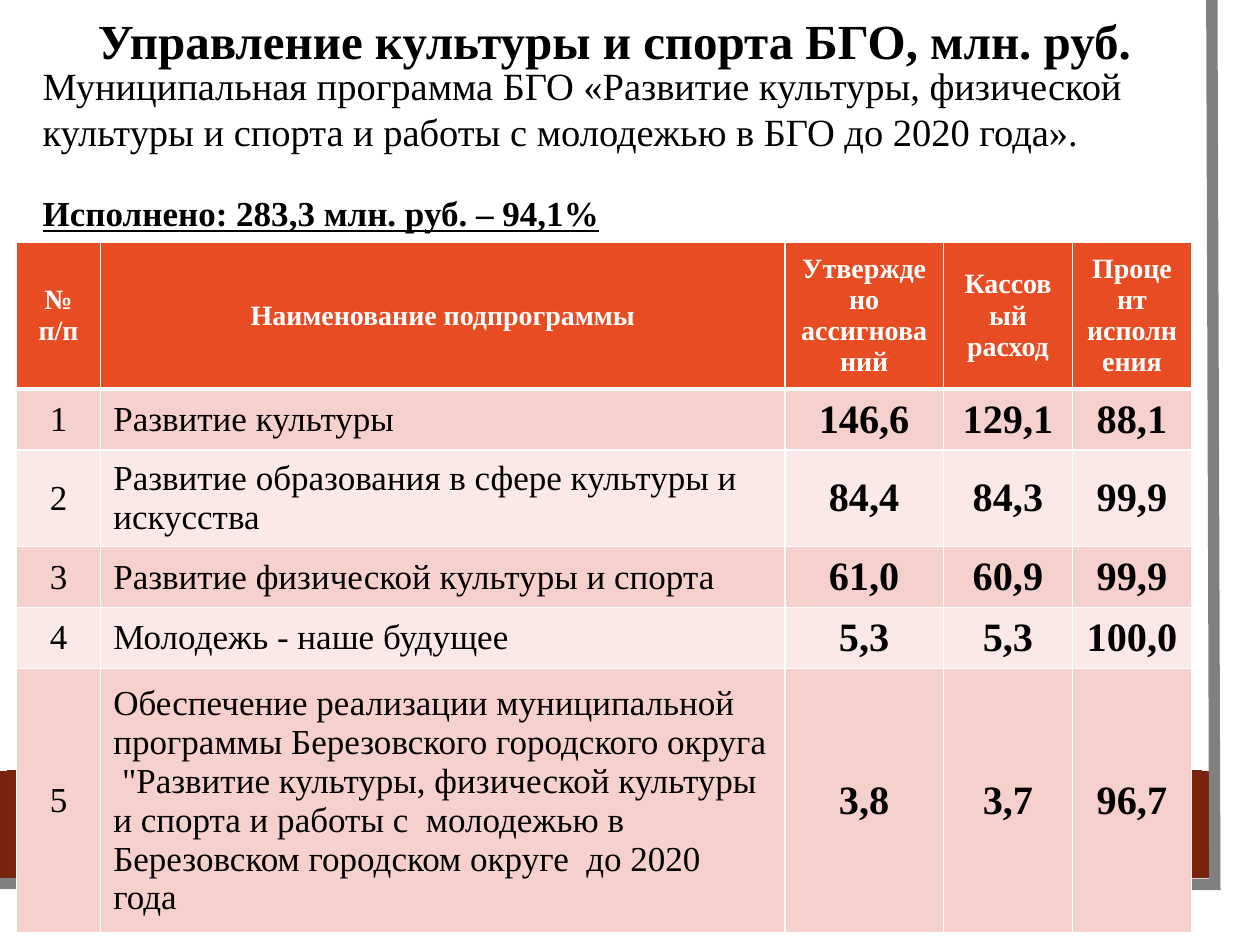
import lxml.etree
import pptx
import pptx.dml.color
import pptx.enum.dml
import pptx.enum.shapes
import pptx.enum.text
import pptx.oxml
import pptx.oxml.ns
import pptx.util

Cm = pptx.util.Cm
Pt = pptx.util.Pt
ALIGN = pptx.enum.text.PP_ALIGN
FONT = "Times New Roman"
NS = pptx.oxml.ns.nsdecls("a")
HUES = {
    "white": "FFFFFF",
    "black": "000000",
    "gray": "808080",
    "head": "E84C22",
    "dark": "78230D",
    "odd": "F6D0CD",
    "even": "FBE9E8",
}
COLS = [1.7, 13.79, 3.2, 2.6, 2.4]
ROWS = [2.06, 1.07, 1.24, 1.09, 0.84, 4.42]
DATA = [
    ["№\nп/п", "Наименование подпрограммы", "Утверждено ассигнований",
     "Кассовый расход", "Процент исполнения"],
    ["1", "Развитие культуры", "146,6", "129,1", "88,1"],
    ["2", "Развитие образования в сфере культуры и искусства",
     "84,4", "84,3", "99,9"],
    ["3", "Развитие физической культуры и спорта", "61,0", "60,9", "99,9"],
    ["4", "Молодежь - наше будущее", "5,3", "5,3", "100,0"],
    ["5", "Обеспечение реализации муниципальной программы Березовского "
     "городского округа  \"Развитие культуры, физической культуры и спорта "
     "и работы с  молодежью в Березовском городском округе  до 2020 года",
     "3,8", "3,7", "96,7"],
]


def tint(name):
    """Return the colour of that name."""
    return pptx.dml.color.RGBColor.from_string(HUES[name])


def write(para, text, size=20, hue="black", bold=False, line=False,
          align=ALIGN.LEFT, gap=None):
    """Put formatted text into a paragraph."""
    para.alignment = align
    if gap:
        para.space_before = Pt(gap)
    run = para.add_run()
    run.text = text
    font = run.font
    font.name, font.size, font.bold = FONT, Pt(size), bold
    font.underline = line
    font.color.rgb = tint(hue)


def add_box(slide, left, top, width, height):
    """Add a wrapping text box and return its frame."""
    box = slide.shapes.add_textbox(Cm(left), Cm(top), Cm(width), Cm(height))
    frame = box.text_frame
    frame.word_wrap = True
    frame.auto_size = pptx.enum.text.MSO_AUTO_SIZE.SHAPE_TO_FIT_TEXT
    return frame


def add_rect(slide, left, top, width, height):
    """Add a rectangle without outline or shadow."""
    rect = slide.shapes.add_shape(
        pptx.enum.shapes.MSO_SHAPE.RECTANGLE,
        Cm(left), Cm(top), Cm(width), Cm(height))
    rect.shadow.inherit = False
    rect.line.fill.background()
    return rect


def add_back(slide):
    """Draw the sheet, the ribbon and the gray edge."""
    sheet = add_rect(slide, 0, 0, 24.97, 18.47)
    sheet.fill.solid()
    sheet.fill.fore_color.rgb = tint("white")

    band = add_rect(slide, 0, 15.54, 24.38, 2.16)
    band.fill.gradient()
    for stop, hue, pos in zip(band.fill.gradient_stops,
                              ("head", "dark"), (0.34, 1)):
        stop.color.rgb, stop.position = tint(hue), pos
    lin = band.element.find(".//" + pptx.oxml.ns.qn("a:lin"))
    lin.getparent().replace(lin, pptx.oxml.parse_xml(
        f'<a:path {NS} path="circle"><a:fillToRect l="50000" t="50000" '
        'r="50000" b="50000"/></a:path>'))

    pen = slide.shapes.build_freeform(Cm(24.43), Cm(0))
    pen.add_line_segments([(Cm(24.49), Cm(17.83)), (Cm(-0.05), Cm(17.81))],
                          close=False)
    edge = pen.convert_to_shape()
    edge.shadow.inherit = False
    edge.fill.background()
    edge.line.color.rgb = tint("gray")
    edge.line.width = Pt(6.5)
    edge.line._get_or_add_ln().append(
        pptx.oxml.parse_xml(f'<a:miter {NS} lim="800000"/>'))


def rule(cell, row):
    """Set white borders, thick below the header row."""
    thick = {"T": 3 if row == 1 else 1, "B": 3 if row == 0 else 1}
    props = cell._tc.get_or_add_tcPr()
    for side in "LRTB":
        width = Pt(thick.get(side, 1))
        props.append(pptx.oxml.parse_xml(
            f'<a:ln{side} {NS} w="{width}"><a:solidFill><a:srgbClr '
            f'val="{HUES["white"]}"/></a:solidFill></a:ln{side}>'))


def fill_cell(cell, text, row, col):
    """Format one cell by its place in the table."""
    rule(cell, row)
    cell.fill.solid()
    cell.fill.fore_color.rgb = tint(
        "head" if row == 0 else "odd" if row % 2 else "even")
    cell.vertical_anchor = pptx.enum.text.MSO_ANCHOR.MIDDLE
    if row == 0:
        style = dict(size=16, hue="white", bold=True)
    elif col > 1:
        style = dict(size=23, bold=True)
    else:
        style = dict(size=20)
    align = ALIGN.LEFT if row and col == 1 else ALIGN.CENTER
    frame = cell.text_frame
    for idx, part in enumerate(text.split("\n")):
        para = frame.add_paragraph() if idx else frame.paragraphs[0]
        write(para, part, align=align, **style)


def add_grid(slide):
    """Add the table of subprograms."""
    tall = Cm(13.08)
    shape = slide.shapes.add_table(len(ROWS), len(COLS), Cm(0.33), Cm(4.88),
                                   Cm(sum(COLS)), tall)
    grid = shape.table
    grid.first_row = grid.horz_banding = False
    for col, width in zip(grid.columns, COLS):
        col.width = Cm(width)
    for row, height in zip(grid.rows, ROWS):
        row.height = Cm(height)
    shape.height = tall
    for row, line in enumerate(DATA):
        for col, text in enumerate(line):
            fill_cell(grid.cell(row, col), text, row, col)


def main():
    """Build the slide and save it."""
    deck = pptx.Presentation()
    deck.slide_width, deck.slide_height = Cm(25.4), Cm(19.05)
    slide = deck.slides.add_slide(deck.slide_layouts[6])
    add_back(slide)
    title = add_box(slide, 0.61, 0.08, 23.55, 1.45)
    write(title.paragraphs[0], "Управление культуры и спорта БГО, млн. руб.",
          size=28, bold=True, align=ALIGN.CENTER)
    intro = add_box(slide, 0.61, 1.12, 23.55, 3.76)
    write(intro.paragraphs[0],
          "Муниципальная программа БГО «Развитие культуры, физической "
          "культуры и спорта и работы с молодежью в БГО до 2020 года».",
          size=22)
    write(intro.add_paragraph(), "Исполнено: 283,3 млн. руб. – 94,1%",
          bold=True, line=True, gap=21.5)
    add_grid(slide)
    deck.save("out.pptx")


if __name__ == "__main__":
    main()
